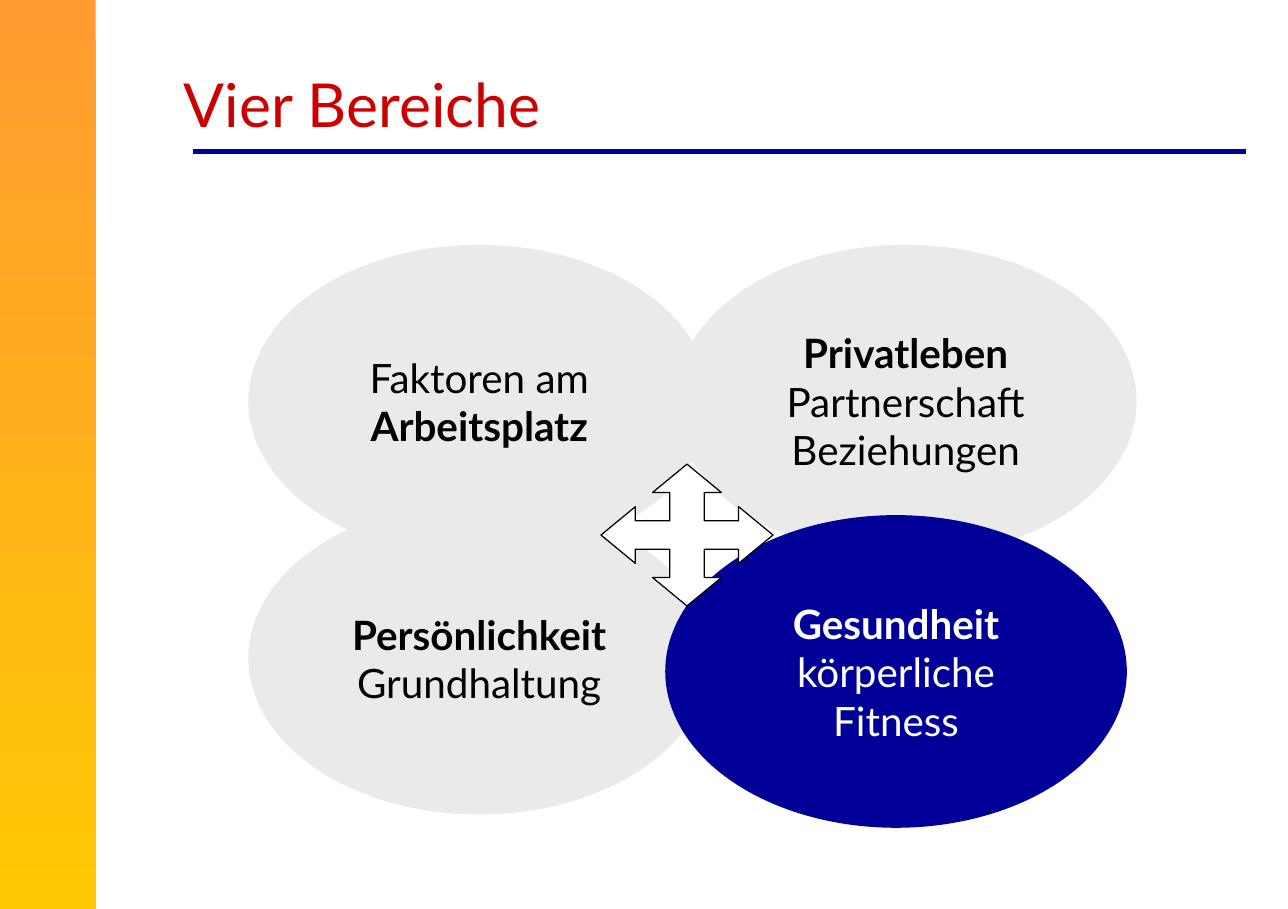
"""Build the slide "Vier Bereiche": four overlapping ellipses around a four-way arrow."""
from lxml import etree
from pptx import Presentation
from pptx.dml.color import RGBColor
from pptx.enum.shapes import MSO_CONNECTOR, MSO_SHAPE
from pptx.enum.text import MSO_ANCHOR, PP_ALIGN
from pptx.oxml.ns import qn
from pptx.util import Inches, Pt

RECT, OVAL = MSO_SHAPE.RECTANGLE, MSO_SHAPE.OVAL
LINE = MSO_CONNECTOR.STRAIGHT
MIDDLE, CENTER = MSO_ANCHOR.MIDDLE, PP_ALIGN.CENTER
FONT, NAVY, GREY = "Lato", "000099", "EAEAEA"


def color(text):
    return RGBColor.from_string(text)


def write(para, text, tint, **form):
    run = para.add_run()
    run.text = text
    run.font.color.rgb = color(tint)
    for key, value in {"name": FONT, **form}.items():
        setattr(run.font, key, value)


deck = Presentation()
deck.slide_width, deck.slide_height = Inches(10.63), Inches(7.5)
slide = deck.slides.add_slide(deck.slide_layouts[6])
shapes = slide.shapes

bar = shapes.add_shape(RECT, 0, 0, Inches(0.79), deck.slide_height)
bar.shadow.inherit = False
bar.line.fill.background()
bar.fill.gradient()
bar.fill.gradient_angle = 270
for stop, tint, place in zip(bar.fill.gradient_stops, ("FF9B31", "FFC804"), (0, 1)):
    stop.color.rgb = color(tint)
    stop.position = place

title = shapes.add_textbox(Inches(1.42), Inches(0.5), Inches(9.1), Inches(0.7))
title.text_frame.word_wrap = True
write(title.text_frame.paragraphs[0], "Vier Bereiche", "CC0000", size=Pt(36))

rule = shapes.add_connector(LINE, Inches(1.59), Inches(1.25), Inches(10.28), Inches(1.25))
rule.line.color.rgb = color(NAVY)
rule.line.width = Pt(3)
etree.SubElement(rule._element.spPr, qn("a:effectLst"))

areas = [
    (2.05, 4.14, GREY, "000000", "Persönlichkeit", ["Persönlichkeit", "Grundhaltung"]),
    (2.05, 2.02, GREY, "000000", "Arbeitsplatz", ["Faktoren am", "Arbeitsplatz"]),
    (5.57, 2.02, GREY, "000000", "Privatleben", ["Privatleben", "Partnerschaft", "Beziehungen"]),
    (5.49, 4.25, NAVY, "FFFFFF", "Gesundheit", ["Gesundheit", "körperliche", "Fitness"]),
]
for left, top, fill, ink, key, lines in areas:
    area = shapes.add_shape(OVAL, Inches(left), Inches(top), Inches(3.81), Inches(2.58))
    area.shadow.inherit = False
    area.fill.solid()
    area.fill.fore_color.rgb = color(fill)
    area.line.fill.background()
    frame = area.text_frame
    frame.word_wrap = False
    frame.vertical_anchor = MIDDLE
    for index, text in enumerate(lines):
        para = frame.add_paragraph() if index else frame.paragraphs[0]
        para.alignment = CENTER
        write(para, text, ink, size=Pt(24), bold=text == key)

arm = [(0, -5), (-2, -3), (-1, -3), (-1, -1), (-3, -1), (-3, -2)]
points = []
for turn in range(4):
    points += arm
    arm = [(y, -x) for x, y in arm]
spots = [(Inches(5.67 + 0.142 * x), Inches(4.415 + 0.117 * y)) for x, y in points]
path = shapes.build_freeform(*spots[0])
path.add_line_segments(spots[1:], close=True)
arrow = path.convert_to_shape()
arrow.shadow.inherit = False
arrow.fill.solid()
arrow.fill.fore_color.rgb = color("FFFFFF")
arrow.line.color.rgb = color("000000")
arrow.line.width = Pt(0.75)

deck.save("out.pptx")
